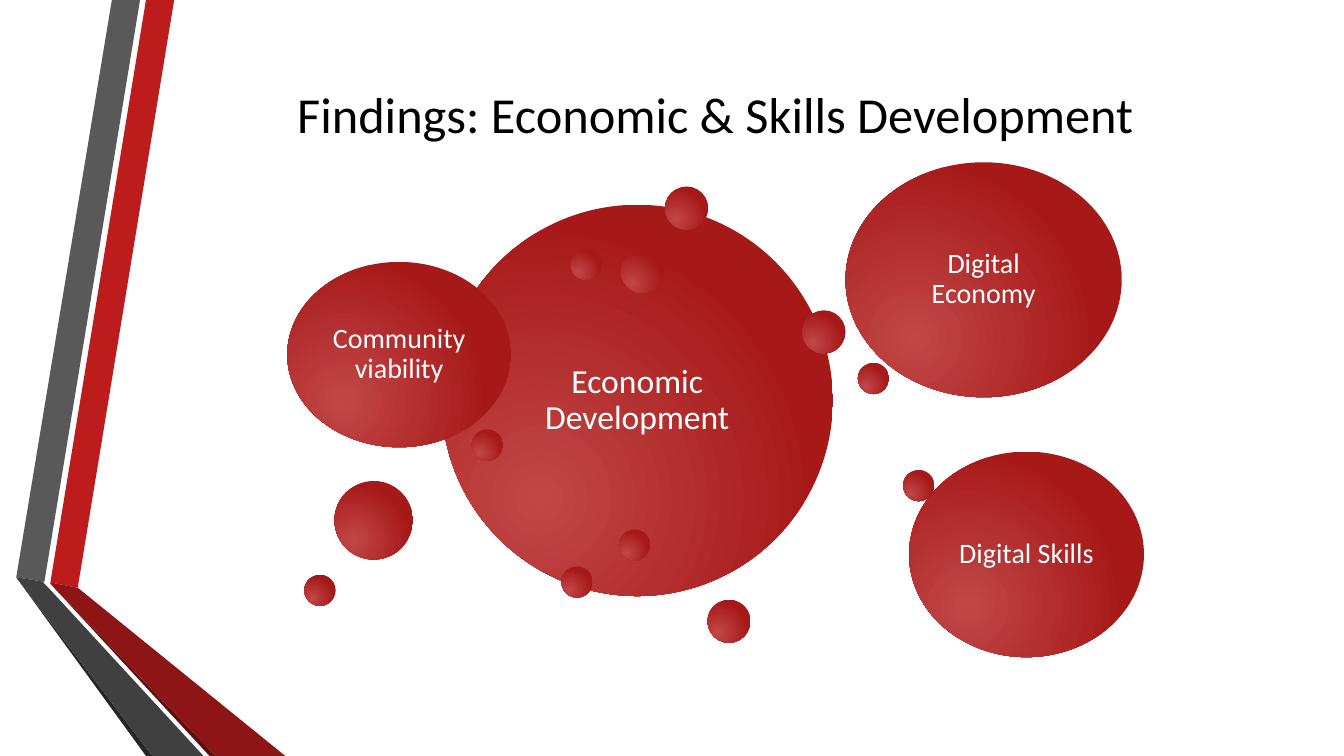
import dataclasses

import pptx
import pptx.dml.color
import pptx.enum.shapes
import pptx.enum.text
import pptx.oxml
import pptx.oxml.ns
import pptx.util
from pptx.util import Cm


@dataclasses.dataclass(frozen=True)
class Theme:
    font: str = "Calibri"
    title_size: int = 36
    main_size: int = 24
    label_size: int = 20
    title_color: str = "000000"
    label_color: str = "FFFFFF"
    bubble_center: str = "C14747"
    bubble_edge: str = "A71919"
    red: str = "BC1C1C"
    red_dark: str = "8D1515"
    red_shade: str = "5E0E0E"
    gray: str = "595959"
    gray_dark: str = "404040"
    gray_shade: str = "262626"


THEME = Theme()
SLIDE_WIDTH, SLIDE_HEIGHT = 33.87, 19.05
SMALL, MEDIUM, LARGE = 0.79, 1.09, 1.98

# Outlines in centimetres, back to front
RIBBONS = [
    (THEME.red, [(1.27, 14.68), (1.96, 14.81), (4.39, 0), (3.68, 0)]),
    (THEME.gray, [(3.53, 0), (2.82, 0), (0.41, 14.55), (1.12, 14.66)]),
    (THEME.gray_shade, [(0.41, 14.55), (3.68, SLIDE_HEIGHT), (3.84, SLIDE_HEIGHT)]),
    (THEME.red_shade, [(1.27, 14.71), (5.28, SLIDE_HEIGHT), (5.44, SLIDE_HEIGHT)]),
    (THEME.red_dark, [(1.27, 14.71), (5.44, SLIDE_HEIGHT), (7.19, SLIDE_HEIGHT),
                      (1.96, 14.81), (1.27, 14.68)]),
    (THEME.gray_dark, [(5.13, SLIDE_HEIGHT), (1.22, 14.81), (1.09, 14.68),
                       (1.12, 14.66), (0.41, 14.55), (3.84, SLIDE_HEIGHT)]),
]

# Left, top, width, height in centimetres, then label and its size; back to front
BUBBLES = [
    (11.13, 5.16, 9.86, 9.86, "Economic Development", THEME.main_size),
    (16.76, 4.70, MEDIUM, MEDIUM),
    (14.15, 14.27, SMALL, SMALL),
    (21.62, 9.14, SMALL, SMALL),
    (17.83, 15.11, MEDIUM, MEDIUM),
    (14.38, 6.27, SMALL, SMALL),
    (11.89, 10.82, SMALL, SMALL),
    (7.24, 6.60, 5.64, 4.67, "Community viability", THEME.label_size),
    (15.65, 6.30, MEDIUM, MEDIUM),
    (8.43, 12.12, LARGE, LARGE),
    (21.31, 4.09, 6.96, 5.92, "Digital Economy", THEME.label_size),
    (20.22, 7.82, MEDIUM, MEDIUM),
    (7.67, 14.48, SMALL, SMALL),
    (15.60, 13.34, SMALL, SMALL),
    (22.91, 11.38, 5.92, 5.18, "Digital Skills", THEME.label_size),
    (22.76, 11.84, SMALL, SMALL),
]


def rgb(color):
    return pptx.dml.color.RGBColor.from_string(color)


def write_text(text_frame, text, size, color):
    text_frame.word_wrap = True
    text_frame.vertical_anchor = pptx.enum.text.MSO_ANCHOR.MIDDLE
    paragraph = text_frame.paragraphs[0]
    paragraph.alignment = pptx.enum.text.PP_ALIGN.CENTER
    run = paragraph.add_run()
    run.text = text
    run.font.name = THEME.font
    run.font.size = pptx.util.Pt(size)
    run.font.color.rgb = rgb(color)
    return paragraph


def set_title(slide, text):
    title = slide.shapes.title
    title.left, title.top = Cm(4.11), Cm(1.9)
    title.width, title.height = Cm(27.84), Cm(1.93)
    write_text(title.text_frame, text, THEME.title_size, THEME.title_color)


def add_ribbon(slide, color, points):
    corners = [(Cm(x), Cm(y)) for x, y in points]
    builder = slide.shapes.build_freeform(*corners[0])
    builder.add_line_segments(corners[1:], close=True)
    shape = builder.convert_to_shape()
    shape.shadow.inherit = False
    shape.fill.solid()
    shape.fill.fore_color.rgb = rgb(color)
    shape.line.fill.background()


def fill_radial(shape):
    """Give the shape a circular gradient that glows from its lower left."""
    shape.fill.gradient()
    stops = shape.fill.gradient_stops
    for stop, position, color in zip(stops, (0, 1),
                                     (THEME.bubble_center, THEME.bubble_edge)):
        stop.position = position
        stop.color.rgb = rgb(color)
    gradient = shape._element.spPr.find(pptx.oxml.ns.qn("a:gradFill"))
    gradient.remove(gradient.find(pptx.oxml.ns.qn("a:lin")))
    gradient.append(pptx.oxml.parse_xml(
        f'<a:path {pptx.oxml.ns.nsdecls("a")} path="circle">'
        '<a:fillToRect l="50000" t="100000" r="100000" b="50000"/></a:path>'))


def add_bubble(slide, left, top, width, height, label=None, size=None):
    shape = slide.shapes.add_shape(
        pptx.enum.shapes.MSO_SHAPE.OVAL, Cm(left), Cm(top), Cm(width), Cm(height))
    shape.shadow.inherit = False
    shape.line.fill.background()
    fill_radial(shape)
    if label:
        text_frame = shape.text_frame
        inset = Cm(size / 100)
        text_frame.margin_left = text_frame.margin_right = inset
        text_frame.margin_top = text_frame.margin_bottom = inset
        paragraph = write_text(text_frame, label, size, THEME.label_color)
        paragraph.line_spacing = 0.9


def main():
    presentation = pptx.Presentation()
    presentation.slide_width = Cm(SLIDE_WIDTH)
    presentation.slide_height = Cm(SLIDE_HEIGHT)
    slide = presentation.slides.add_slide(presentation.slide_layouts[5])
    for color, points in RIBBONS:
        add_ribbon(slide, color, points)
    set_title(slide, "Findings: Economic & Skills Development")
    for bubble in BUBBLES:
        add_bubble(slide, *bubble)
    presentation.save("out.pptx")


if __name__ == "__main__":
    main()
